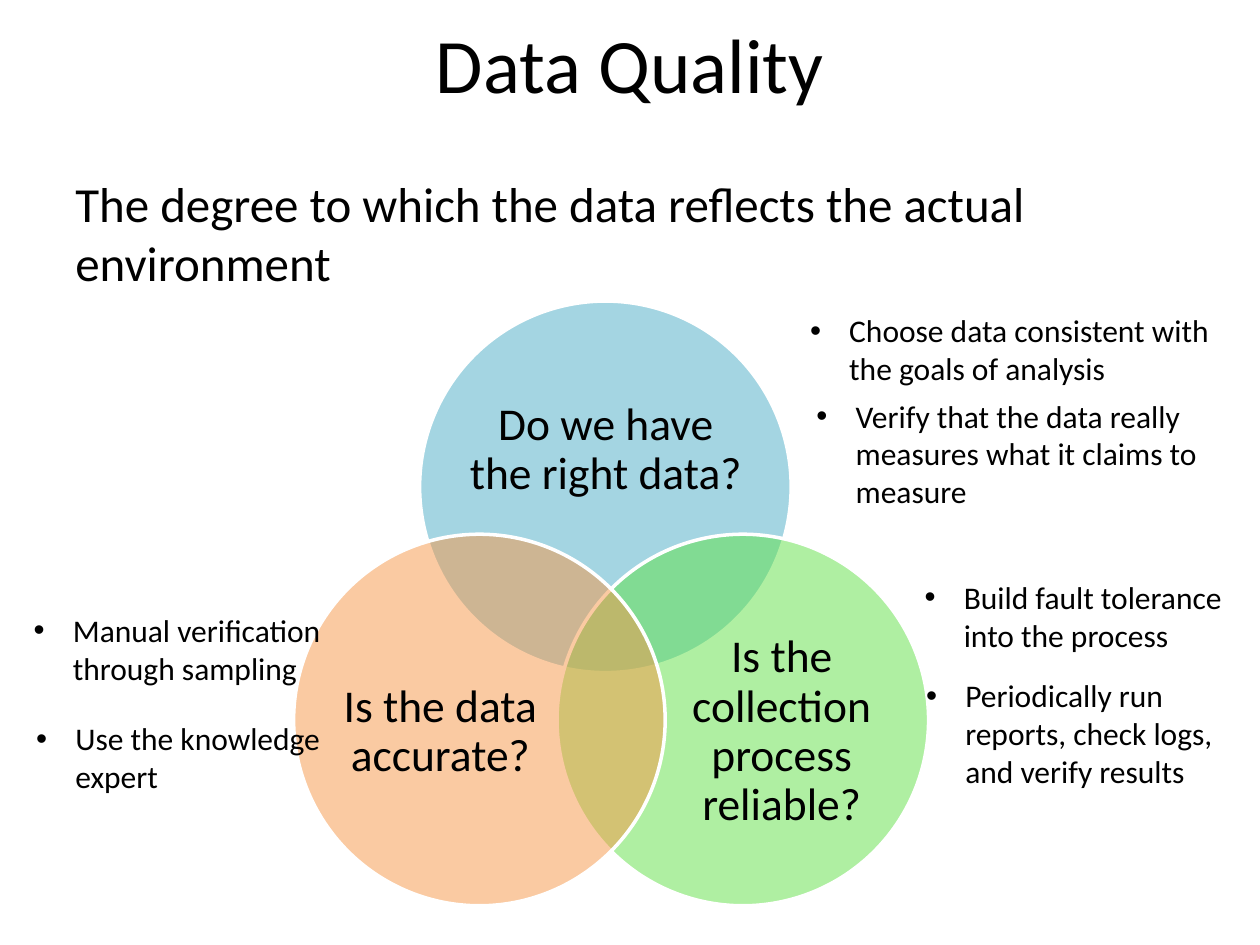
from lxml.etree import SubElement
from pptx import Presentation
from pptx.dml.color import RGBColor
from pptx.enum.shapes import MSO_SHAPE as Shape
from pptx.enum.text import MSO_ANCHOR as Anchor, MSO_AUTO_SIZE as AutoSize, PP_ALIGN as Align
from pptx.oxml.ns import qn
from pptx.util import Cm, Pt

COLORS = {"text": "000000", "outline": "FFFFFF",
          "blue": "4BACC6", "green": "60E146", "orange": "F79646"}
FONT = "Calibri"

# Content, lengths in cm
TITLE = "Data Quality"
DEFINITION = "The degree to which the data reflects the actual environment"
DIAMETER = 7.49
# question, color, circle left and top, label box
CIRCLES = [
    ("Do we have the right data?", "blue", (8.46, 6.07), (9.47, 7.39, 5.49, 3.38)),
    ("Is the collection process reliable?", "green", (11.23, 10.77), (13.51, 12.7, 4.5, 4.11)),
    ("Is the data accurate?", "orange", (5.92, 10.77), (6.63, 12.7, 4.5, 4.11)),
]
# advice, box
ADVICE = [
    ("Choose data consistent with the goals of analysis", (16.08, 6.15, 8.69, 1.8)),
    ("Verify that the data really measures what it claims to measure", (16.21, 7.87, 8.79, 2.57)),
    ("Manual verification through sampling", (0.43, 12.19, 6.65, 1.8)),
    ("Use the knowledge\nexpert", (0.48, 14.38, 6.55, 1.8)),
    ("Build fault tolerance into the process", (18.39, 11.53, 7.21, 1.8)),
    ("Periodically run reports, check logs, and verify results", (18.42, 13.51, 6.35, 2.57)),
]


def color(name):
    return RGBColor.from_string(COLORS[name])


def place(shape, box):
    shape.left, shape.top, shape.width, shape.height = map(Cm, box)


def write(shape, text, size, align=Align.LEFT, anchor=Anchor.TOP, spacing=None,
          margin=None, bullet=False):
    frame = shape.text_frame
    frame.word_wrap = True
    frame.auto_size = AutoSize.NONE
    frame.vertical_anchor = anchor
    if margin is not None:
        frame.margin_left = frame.margin_right = Cm(margin)
        frame.margin_top = frame.margin_bottom = Cm(margin)
    paragraph = frame.paragraphs[0]
    paragraph.text = text
    paragraph.alignment = align
    if spacing:
        paragraph.line_spacing = spacing
    for run in paragraph.runs:
        run.font.name, run.font.size = FONT, Pt(size)
        run.font.color.rgb = color("text")
    if bullet:
        properties = paragraph._p.get_or_add_pPr()
        properties.set("marL", str(Cm(0.79)))
        properties.set("indent", str(-Cm(0.79)))
        SubElement(properties, qn("a:buFont"), typeface="Arial")
        SubElement(properties, qn("a:buChar"), char="•")


def add_text(shapes, box, text, size, **formatting):
    write(shapes.add_textbox(*map(Cm, box)), text, size, **formatting)


def add_circle(shapes, left, top, fill):
    circle = shapes.add_shape(Shape.OVAL, *map(Cm, (left, top, DIAMETER, DIAMETER)))
    circle.shadow.inherit = False
    circle.fill.solid()
    circle.fill.fore_color.rgb = color(fill)
    tint = circle.fill._xPr.find(qn("a:solidFill"))[0]
    SubElement(tint, qn("a:alpha"), val="50000")
    circle.line.color.rgb = color("outline")
    circle.line.width = Pt(2)


presentation = Presentation()
presentation.slide_width, presentation.slide_height = Cm(25.4), Cm(19.05)
slide = presentation.slides.add_slide(presentation.slide_layouts[5])

# Title and definition
place(slide.shapes.title, (1.27, 0, 22.86, 2.54))
write(slide.shapes.title, TITLE, 44, align=Align.CENTER, anchor=Anchor.MIDDLE)
add_text(slide.shapes, (1.27, 3.38, 22.86, 12.57), DEFINITION, 28)

# Overlapping circles with their questions
venn = slide.shapes.add_group_shape()
for question, fill, corner, label_box in CIRCLES:
    add_circle(venn.shapes, *corner, fill)
    add_text(venn.shapes, label_box, question, 26, align=Align.CENTER,
             anchor=Anchor.MIDDLE, spacing=0.9, margin=0)

# Advice beside the circles
for advice, box in ADVICE:
    add_text(slide.shapes, box, advice, 18, bullet=True)

presentation.save("out.pptx")
